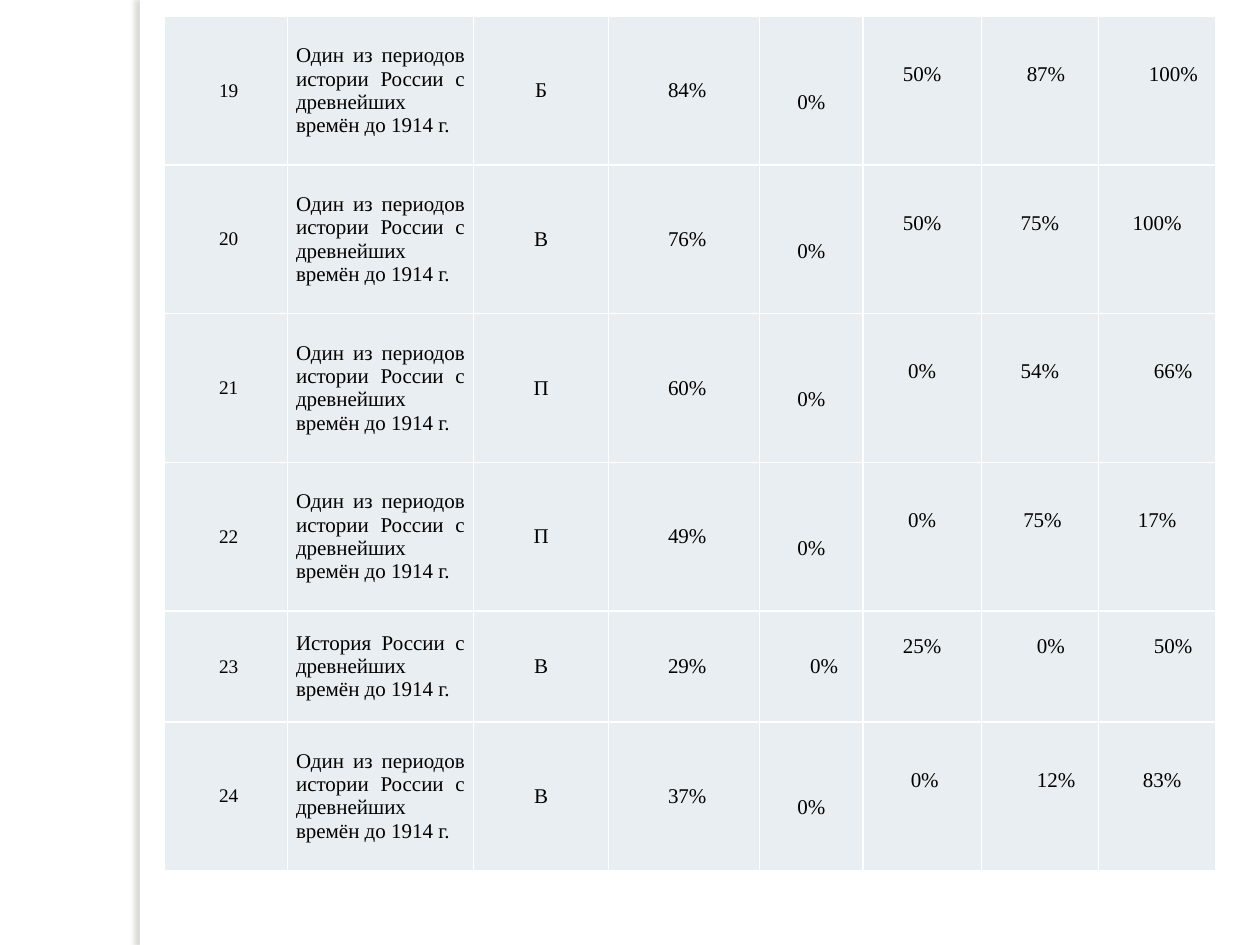
from dataclasses import dataclass

from lxml import etree
from pptx import Presentation
from pptx.dml.color import RGBColor
from pptx.enum.shapes import MSO_SHAPE
from pptx.enum.text import MSO_ANCHOR, PP_ALIGN
from pptx.oxml import parse_xml
from pptx.oxml.ns import nsdecls, qn
from pptx.util import Inches, Pt

LEFT, CENTER, JUSTIFY = PP_ALIGN.LEFT, PP_ALIGN.CENTER, PP_ALIGN.JUSTIFY
TOP, MIDDLE = MSO_ANCHOR.TOP, MSO_ANCHOR.MIDDLE
RECTANGLE = MSO_SHAPE.RECTANGLE


@dataclass(frozen=True)
class Theme:
    """Colours, font and type sizes of the slide."""
    paper: str = "FFFFFF"
    cell: str = "E8EEF1"
    ink: str = "000000"
    shade: str = "736F63"
    font: str = "Times New Roman"
    number_size: int = 11
    body_size: int = 12


THEME = Theme()
COLUMN_WIDTHS = (0.98, 1.48, 1.07, 1.2, 0.82, 0.94, 0.93, 0.93)
PADDING = 0.07
CENTER_SHIFT = 0.05
LINE_HEIGHT = 0.185
PERIOD = "Один из периодов истории России с древнейших времён до 1914 г."
HISTORY = "История России с древнейших времён до 1914 г."

# Each group result is its text, alignment and extra left inset.
TASKS = (
    ("19", PERIOD, "Б", "84%", (("0%", CENTER, 0), ("50%", CENTER, 0),
                                ("87%", LEFT, 0.29), ("100%", LEFT, 0.33))),
    ("20", PERIOD, "В", "76%", (("0%", CENTER, 0), ("50%", CENTER, 0),
                                ("75%", CENTER, 0), ("100%", CENTER, 0))),
    ("21", PERIOD, "П", "60%", (("0%", CENTER, 0), ("0%", CENTER, 0),
                                ("54%", CENTER, 0), ("66%", LEFT, 0.37))),
    ("22", PERIOD, "П", "49%", (("0%", CENTER, 0), ("0%", CENTER, 0),
                                ("75%", CENTER, 0.04), ("17%", CENTER, 0))),
    ("23", HISTORY, "В", "29%", (("0%", LEFT, 0.33), ("25%", CENTER, 0),
                                 ("0%", LEFT, 0.37), ("50%", LEFT, 0.37))),
    ("24", PERIOD, "В", "37%", (("0%", CENTER, 0), ("0%", CENTER, 0.04),
                                ("12%", LEFT, 0.37), ("83%", CENTER, 0.08))),
)


def write_text(cell, text, size=THEME.body_size, align=CENTER, anchor=MIDDLE,
               shift=0, drop=0):
    """Write formatted text into a cell, inset by shift and drop."""
    cell.margin_left = Inches(PADDING + shift)
    cell.margin_right = Inches(PADDING)
    cell.margin_top = Inches(drop)
    cell.margin_bottom = Inches(0)
    cell.vertical_anchor = anchor
    paragraph = cell.text_frame.paragraphs[0]
    paragraph.alignment = align
    run = paragraph.add_run()
    run.text = text
    run.font.size = Pt(size)
    run.font.name = THEME.font
    run.font.color.rgb = RGBColor.from_string(THEME.ink)


def style_cell(cell):
    """Give a cell its borders and fill."""
    properties = cell._tc.get_or_add_tcPr()
    for side in ("lnL", "lnR", "lnT", "lnB"):
        properties.append(parse_xml(
            f'<a:{side} {nsdecls("a")} w="{Pt(1)}"><a:solidFill>'
            f'<a:srgbClr val="{THEME.paper}"/></a:solidFill></a:{side}>'))
    cell.fill.solid()
    cell.fill.fore_color.rgb = RGBColor.from_string(THEME.cell)


def fill_task_row(cells, task):
    """Fill one row with a task and its results by group."""
    number, topic, level, total, (first, *others) = task
    is_short = topic == HISTORY
    write_text(cells[0], number, size=THEME.number_size, shift=CENTER_SHIFT)
    write_text(cells[1], topic, align=JUSTIFY)
    write_text(cells[2], level)
    write_text(cells[3], total, shift=CENTER_SHIFT)
    result, align, shift = first
    write_text(cells[4], result, align=align, shift=shift,
               drop=0 if is_short else LINE_HEIGHT)
    for cell, (result, align, shift) in zip(cells[5:], others):
        write_text(cell, result, align=align, anchor=TOP, shift=shift,
                   drop=LINE_HEIGHT * (1 if is_short else 2))


def add_results_table(slide):
    """Add the table of task results."""
    table = slide.shapes.add_table(
        len(TASKS), len(COLUMN_WIDTHS), Inches(1.3), Inches(0.13),
        Inches(sum(COLUMN_WIDTHS)), Inches(6.77)).table
    table.first_row = table.horz_banding = False
    for column, width in zip(table.columns, COLUMN_WIDTHS):
        column.width = Inches(width)
    for row, task in zip(table.rows, TASKS):
        row.height = Inches(0.88 if task[1] == HISTORY else 1.18)
        for cell in row.cells:
            style_cell(cell)
        fill_task_row(list(row.cells), task)


def add_side_band(slide):
    """Add the white band that casts a soft shadow to the left."""
    band = slide.shapes.add_shape(
        RECTANGLE, Inches(1.11), 0, Inches(0.08), Inches(7.5))
    band.fill.solid()
    band.fill.fore_color.rgb = RGBColor.from_string(THEME.paper)
    band.line.fill.background()
    band.shadow.inherit = False
    effects = band._element.spPr.find(qn("a:effectLst"))
    shadow = etree.SubElement(
        effects, qn("a:outerShdw"), blurRad=str(Pt(3)), dist=str(Pt(3)),
        dir="10800000", algn="tl", rotWithShape="0")
    shade = etree.SubElement(shadow, qn("a:srgbClr"), val=THEME.shade)
    etree.SubElement(shade, qn("a:alpha"), val="25000")


def main():
    """Build the slide and save it."""
    deck = Presentation()
    deck.slide_width, deck.slide_height = Inches(10), Inches(7.5)
    slide = deck.slides.add_slide(deck.slide_layouts[6])
    add_side_band(slide)
    add_results_table(slide)
    deck.save("out.pptx")


if __name__ == "__main__":
    main()
